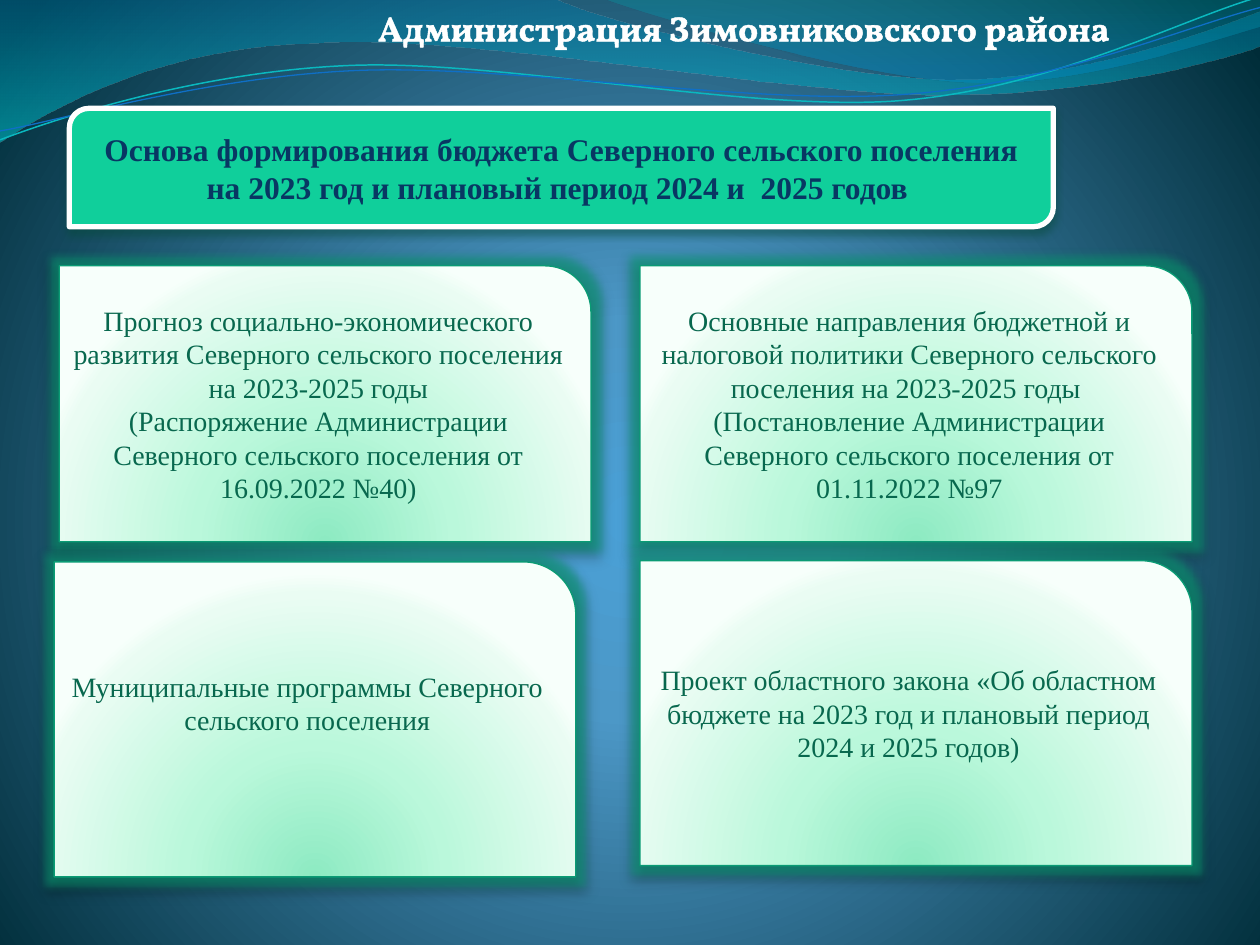
from math import cos, radians, sin

from lxml.etree import SubElement
from pptx import Presentation
from pptx.dml.color import RGBColor
from pptx.enum.shapes import MSO_SHAPE
from pptx.enum.text import MSO_ANCHOR, PP_ALIGN
from pptx.oxml.ns import qn
from pptx.util import Inches, Pt

WHITE = RGBColor(0xFF, 0xFF, 0xFF)
BLACK = RGBColor(0x00, 0x00, 0x00)
GREEN = RGBColor(0x10, 0xCF, 0x9B)
EDGE_GREEN = RGBColor(0x0A, 0x9B, 0x74)
TEXT_GREEN = RGBColor(0x08, 0x68, 0x4E)
SHADOW_GREEN = RGBColor(0x04, 0x4A, 0x37)
NAVY = RGBColor(0x08, 0x37, 0x63)
TEAL = RGBColor(0x0A, 0xB8, 0xBF)
BLUE = RGBColor(0x0F, 0x6F, 0xC6)

# Gradient stops: position %, colour, opacity %
PAGE_STOPS = [(0, RGBColor(0x4A, 0xA0, 0xD6), 100), (25, RGBColor(0x4C, 0x98, 0xC7), 100),
              (100, RGBColor(0x00, 0x2C, 0x38), 100)]
CARD_STOPS = [(0, RGBColor(0x8D, 0xEA, 0xC2), 100), (43, RGBColor(0xBA, 0xF8, 0xDB), 100),
              (93, RGBColor(0xEA, 0xFC, 0xF3), 100), (100, RGBColor(0xF7, 0xFF, 0xFB), 100)]
LARGE_WAVE_STOPS = [(0, RGBColor(0x00, 0x74, 0xA1), 45), (100, RGBColor(0x00, 0xC6, 0xCF), 55)]
SMALL_WAVE_STOPS = [(0, RGBColor(0x00, 0xA1, 0xA9), 30), (80, RGBColor(0x00, 0x8B, 0xBF), 45)]

# Outlines: a pair is a line end, six numbers are a Bézier curve
LARGE_WAVE = [(0, 0), (4.4, -0.01), (4.76, 0.17, 6.64, 0.63, 7.58, 0.63),
              (8.53, 0.63, 9.58, 0.26, 10, 0.09), (10.01, 0.36),
              (9.83, 0.44, 8.7, 0.76, 7.46, 0.75), (6.22, 0.75, 3.82, 0.28, 2.57, 0.34),
              (1.29, 0.36, 0.46, 0.83, -0.01, 1.13), (0, 0)]
SMALL_WAVE = [(4.79, -0.01), (5.09, 0.11, 6.82, 0.62, 7.69, 0.65),
              (8.56, 0.69, 9.61, 0.32, 10, 0.21), (10, 0), (4.79, -0.01)]
TEAL_CURVE = [(0, 1.11), (0.48, 0.93, 1.58, 0.57, 2.77, 0.52),
              (3.95, 0.47, 5.93, 0.89, 7.13, 0.8), (8.33, 0.71, 9.38, 0.15, 9.98, -0.02)]
BLUE_CURVE = [(0, 1.04), (0.47, 0.96, 1.64, 0.61, 2.83, 0.56),
              (4.03, 0.51, 5.97, 0.84, 7.17, 0.75), (8.36, 0.67, 9.41, 0.21, 10, 0.06)]
CURVE_TILT = 2.7

# Cards: left, top, width, height, bottom inset, paragraphs
CARDS = [
    (0.47, 2.11, 4.22, 2.19, 0.05,
     ["Прогноз социально-экономического развития Северного сельского поселения на 2023-2025 годы",
      "(Распоряжение Администрации Северного сельского поселения от 16.09.2022 №40)"]),
    (5.08, 2.11, 4.38, 2.19, 0.05,
     ["Основные направления бюджетной и налоговой политики Северного сельского поселения "
      "на 2023-2025 годы ",
      "(Постановление Администрации Северного сельского поселения от 01.11.2022 №97"]),
    (0.43, 4.46, 4.14, 2.5, 0.31,
     ["Муниципальные программы Северного сельского поселения"]),
    (5.08, 4.45, 4.38, 2.42, 0.05,
     ["Проект областного закона «Об областном бюджете на 2023 год и плановый период "
      "2024 и 2025 годов)"]),
]


def add_color(parent, color, opacity):
    node = SubElement(parent, qn("a:srgbClr"), val=str(color))
    if opacity < 100:
        SubElement(node, qn("a:alpha"), val=str(opacity * 1000))


def set_gradient(fill, element, stops, focus=None):
    """Vertical gradient, or a circular one around focus (left, top, right, bottom %)."""
    fill.gradient()
    gradient = next(element.iter(qn("a:gradFill")))
    for child in list(gradient):
        gradient.remove(child)
    stop_list = SubElement(gradient, qn("a:gsLst"))
    for position, color, opacity in stops:
        add_color(SubElement(stop_list, qn("a:gs"), pos=str(position * 1000)), color, opacity)
    if focus:
        circle = SubElement(gradient, qn("a:path"), path="circle")
        sides = {side: str(value * 1000) for side, value in zip("ltrb", focus)}
        SubElement(circle, qn("a:fillToRect"), sides)
    else:
        SubElement(gradient, qn("a:lin"), ang="5400000", scaled="0")


def set_effects(shape, shadow, glow=None):
    """Shadow and glow are (colour, opacity %, blur in points)."""
    shape.shadow.inherit = False
    effects = shape.element.spPr.find(qn("a:effectLst"))
    if glow:
        color, opacity, radius = glow
        add_color(SubElement(effects, qn("a:glow"), rad=str(Pt(radius))), color, opacity)
    color, opacity, blur = shadow
    node = SubElement(effects, qn("a:outerShdw"), blurRad=str(Pt(blur)), dist=str(Pt(3)),
                      dir="5400000", rotWithShape="0")
    add_color(node, color, opacity)


def pairs(segment):
    return list(zip(segment[::2], segment[1::2]))


def turn(outline, center, degrees):
    """Turn an outline clockwise around its center."""
    c, s = cos(radians(degrees)), sin(radians(degrees))
    turned = []
    for segment in outline:
        offsets = [(x - center[0], y - center[1]) for x, y in pairs(segment)]
        turned.append(tuple(value for dx, dy in offsets
                            for value in (center[0] + dx * c - dy * s,
                                          center[1] + dx * s + dy * c)))
    return turned


def add_outline(page, outline, close):
    ends = [(Inches(segment[-2]), Inches(segment[-1])) for segment in outline]
    builder = page.shapes.build_freeform(*ends[0])
    builder.add_line_segments(ends[1:], close=close)
    shape = builder.convert_to_shape()
    shape.shadow.inherit = False
    # Bend the straight pieces that have control points
    pieces = list(shape.element.iter(qn("a:lnTo")))
    for piece, segment in zip(pieces, outline[1:]):
        if len(segment) == 6:
            piece.tag = qn("a:cubicBezTo")
            piece.remove(piece[0])
            for x, y in pairs(segment):
                SubElement(piece, qn("a:pt"), x=str(Inches(x) - shape.left),
                           y=str(Inches(y) - shape.top))
    return shape


def add_wave(page, outline, stops):
    wave = add_outline(page, outline, True)
    set_gradient(wave.fill, wave.element, stops)
    wave.line.fill.background()


def add_curve(page, outline, center, color, width):
    curve = add_outline(page, turn(outline, center, CURVE_TILT), False)
    curve.rotation = 360 - CURVE_TILT
    curve.fill.background()
    set_line(curve, color, width)


def set_line(shape, color, width):
    shape.line.color.rgb = color
    shape.line.width = Pt(width)


def write_text(shape, texts, color, align=PP_ALIGN.CENTER, anchor=MSO_ANCHOR.MIDDLE, **font):
    frame = shape.text_frame
    frame.word_wrap = True
    frame.vertical_anchor = anchor
    for index, text in enumerate(texts):
        para = frame.add_paragraph() if index else frame.paragraphs[0]
        para.alignment = align
        span = para.add_run()
        span.text = text
        span.font.color.rgb = color
        for name, value in font.items():
            setattr(span.font, name, value)


def add_box(page, kind, left, top, width, height):
    return page.shapes.add_shape(kind, *map(Inches, (left, top, width, height)))


def add_heading(page):
    box = add_box(page, MSO_SHAPE.ROUND_2_DIAG_RECTANGLE, 0.55, 0.86, 7.81, 0.94)
    box.fill.solid()
    box.fill.fore_color.rgb = GREEN
    set_line(box, WHITE, 3)
    set_effects(box, (SHADOW_GREEN, 48, 4.5))
    text = ("Основа формирования бюджета Северного сельского поселения "
            "на 2023 год и плановый период 2024 и  2025 годов ")
    write_text(box, [text], NAVY, name="Times New Roman", size=Pt(18), bold=True)


def add_card(page, left, top, width, height, inset, texts):
    box = add_box(page, MSO_SHAPE.ROUND_1_RECTANGLE, left, top, width, height)
    set_gradient(box.fill, box.element, CARD_STOPS, (50, 130, 50, -30))
    set_line(box, EDGE_GREEN, 0.75)
    set_effects(box, (BLACK, 40, 5.2), glow=(EDGE_GREEN, 60, 10))
    box.text_frame.margin_bottom = Inches(inset)
    write_text(box, texts, TEXT_GREEN, name="Times New Roman", size=Pt(16))


def place_title(page):
    title = page.shapes.title
    frame = dict(left=2.58, top=0, width=6.33, height=0.44)
    for name, value in frame.items():
        setattr(title, name, Inches(value))
    write_text(title, ["Администрация Зимовниковского района"], WHITE, PP_ALIGN.RIGHT,
               MSO_ANCHOR.TOP, name="Vollkorn", size=Pt(20), bold=True)
    # White letter outline
    properties = next(title.element.iter(qn("a:rPr")))
    line = SubElement(properties, qn("a:ln"), w=str(Pt(1.45)))
    add_color(SubElement(line, qn("a:solidFill")), WHITE, 100)
    properties.insert(0, line)
    # Bring the title in front of the waves
    title.element.getparent().append(title.element)


def main():
    deck = Presentation()
    deck.slide_width, deck.slide_height = Inches(10), Inches(7.5)
    page = deck.slides.add_slide(deck.slide_layouts[5])
    # Background and waves
    set_gradient(page.background.fill, page.element, PAGE_STOPS, (10, 110, 10, 100))
    add_wave(page, LARGE_WAVE, LARGE_WAVE_STOPS)
    add_wave(page, SMALL_WAVE, SMALL_WAVE_STOPS)
    add_curve(page, TEAL_CURVE, (4.99, 0.58), TEAL, 0.85)
    add_curve(page, BLUE_CURVE, (5, 0.59), BLUE, 0.75)
    # Content
    add_heading(page)
    for card in CARDS:
        add_card(page, *card)
    place_title(page)
    deck.save("out.pptx")


if __name__ == "__main__":
    main()
